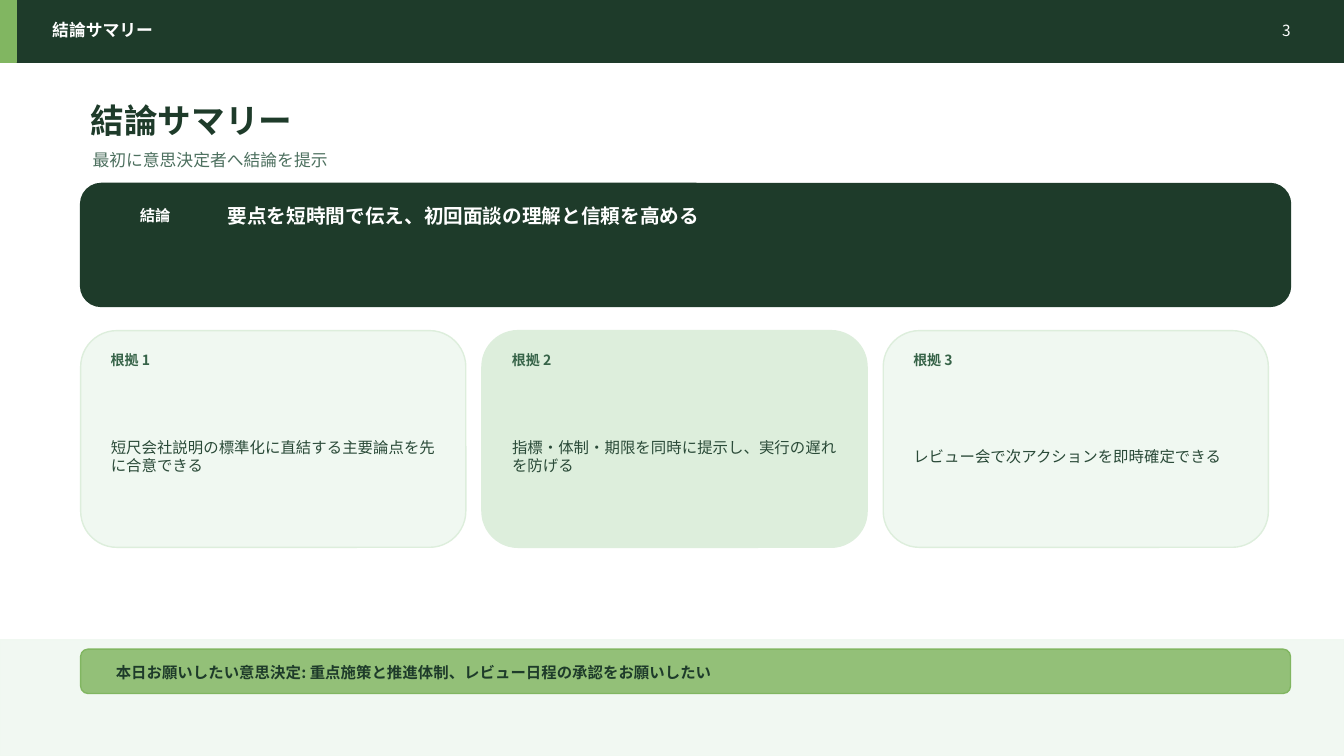
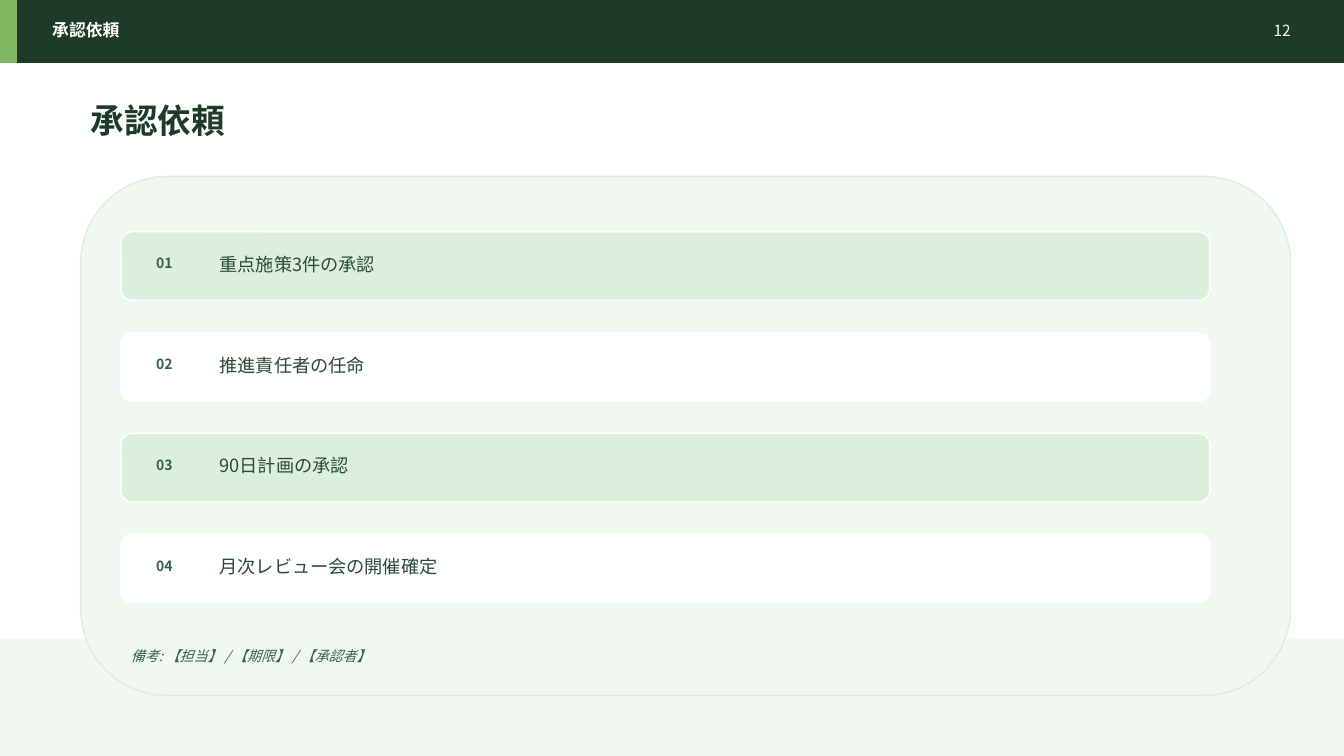
from pptx import Presentation
from pptx.dml.color import RGBColor
from pptx.enum.shapes import MSO_SHAPE as Shape
from pptx.enum.text import MSO_ANCHOR as Anchor, MSO_AUTO_SIZE as AutoSize, PP_ALIGN as Align
from pptx.oxml.xmlchemy import OxmlElement
from pptx.util import Inches, Pt

WIDTH, HEIGHT = 13.33, 7.5
LEFT, CONTENT = 0.8, 12
DARK, ACCENT, BODY, MID, MUTED = "1E3B2A", "81B661", "2A4A38", "366348", "4D705F"
PALE, SOFT, WHITE = "F0F8F1", "DDEEDC", "FFFFFF"
SANS, TITLE_FONT = "Noto Sans CJK JP", "Cambria"


def panel(page, x, y, width, height, fill, line=None, kind=Shape.ROUNDED_RECTANGLE, opacity=100):
    shape = page.shapes.add_shape(kind, Inches(x), Inches(y), Inches(width), Inches(height))
    shape.shadow.inherit = False
    shape.fill.solid()
    shape.fill.fore_color.rgb = RGBColor.from_string(fill)
    shape.line.color.rgb = RGBColor.from_string(line or fill)
    shape.line.width = Pt(1)
    if opacity < 100:
        alpha = OxmlElement("a:alpha")
        alpha.set("val", str(opacity * 1000))
        shape.fill._xPr.find(".//{*}srgbClr").append(alpha)


def label(page, x, y, width, height, text, size, color, bold=False, italic=False,
          align=Align.LEFT, font=SANS, box=None):
    """Write one middle-anchored paragraph in the given box or in a new text box."""
    box = box or page.shapes.add_textbox(0, 0, 0, 0)
    box.left, box.top, box.width, box.height = map(Inches, (x, y, width, height))
    frame = box.text_frame
    frame.text = text
    frame.word_wrap = True
    frame.auto_size = AutoSize.NONE
    frame.vertical_anchor = Anchor.MIDDLE
    para = frame.paragraphs[0]
    para.alignment = align
    para.font.size = Pt(size)
    para.font.bold = bold
    para.font.italic = italic
    para.font.color.rgb = RGBColor.from_string(color)
    para.font.name = font
    east_asian = OxmlElement("a:ea")
    east_asian.set("typeface", SANS)
    para._p.pPr.find("{*}defRPr").append(east_asian)


deck = Presentation()
deck.slide_width, deck.slide_height = Inches(WIDTH), Inches(HEIGHT)
title_only = deck.slide_layouts[5]

# Shared frame: footer band, header band, page number and title
pages = []
for title, number in (("結論サマリー", 3), ("承認依頼", 12)):
    page = deck.slides.add_slide(title_only)
    panel(page, 0, 6.35, WIDTH, HEIGHT - 6.35, PALE, kind=Shape.RECTANGLE, opacity=90)
    panel(page, 0, 0, WIDTH, 0.62, DARK, kind=Shape.RECTANGLE)
    panel(page, 0, 0, 0.16, 0.62, ACCENT, kind=Shape.RECTANGLE)
    label(page, 0.42, 0.17, 8.8, 0.26, title, 12, WHITE, bold=True)
    label(page, 12.15, 0.17, 0.75, 0.26, str(number), 11, WHITE, align=Align.RIGHT)
    label(page, LEFT, 0.95, 11.4, 0.48, title, 24, DARK, bold=True,
          font=TITLE_FONT, box=page.shapes.title)
    pages.append(page)
summary, approval = pages

# Summary: conclusion, three reasons, decision
label(summary, 0.82, 1.44, 11.2, 0.3, "最初に意思決定者へ結論を提示", 12, MUTED)
panel(summary, LEFT, 1.82, CONTENT, 1.22, DARK)
label(summary, 1.04, 2.02, 1, 0.24, "結論", 11, WHITE, bold=True, align=Align.CENTER)
label(summary, 2.16, 1.98, 10.4, 0.32, "要点を短時間で伝え、初回面談の理解と信頼を高める",
      14, WHITE, bold=True)

CARD_WIDTH, CARD_GAP, CARD_PAD = 3.82, 0.16, 0.2
reasons = (
    "短尺会社説明の標準化に直結する主要論点を先に合意できる",
    "指標・体制・期限を同時に提示し、実行の遅れを防げる",
    "レビュー会で次アクションを即時確定できる",
)
for column, reason in enumerate(reasons):
    x = LEFT + column * (CARD_WIDTH + CARD_GAP)
    panel(summary, x, 3.28, CARD_WIDTH, 2.15, SOFT if column % 2 else PALE, SOFT)
    label(summary, x + CARD_PAD, 3.46, 0.9, 0.22, f"根拠 {column + 1}", 10, MID, bold=True)
    label(summary, x + CARD_PAD, 3.78, CARD_WIDTH - 2 * CARD_PAD, 1.5, reason, 11, BODY)

panel(summary, LEFT, 6.44, CONTENT, 0.44, ACCENT, opacity=84)
label(summary, 1.05, 6.56, 11.5, 0.22,
      "本日お願いしたい意思決定: 重点施策と推進体制、レビュー日程の承認をお願いしたい",
      11, DARK, bold=True)

# Approval: numbered requests and remarks
ROW_LEFT, ROW_TOP, ROW_PITCH = 1.2, 2.3, 1
panel(approval, LEFT, 1.75, CONTENT, 5.15, PALE, SOFT)
requests = ("重点施策3件の承認", "推進責任者の任命", "90日計画の承認", "月次レビュー会の開催確定")
for row, request in enumerate(requests):
    y = ROW_TOP + row * ROW_PITCH
    panel(approval, ROW_LEFT, y, 10.8, 0.68, WHITE if row % 2 else SOFT, WHITE)
    label(approval, ROW_LEFT + 0.25, y + 0.21, 0.44, 0.2, f"{row + 1:02}", 10, MID, bold=True)
    label(approval, ROW_LEFT + 0.88, y + 0.2, 9.6, 0.24, request, 13, BODY)
label(approval, ROW_LEFT, 6.4, 6.8, 0.22, "備考: 【担当】 / 【期限】 / 【承認者】", 10, MID, italic=True)

deck.save("out.pptx")
